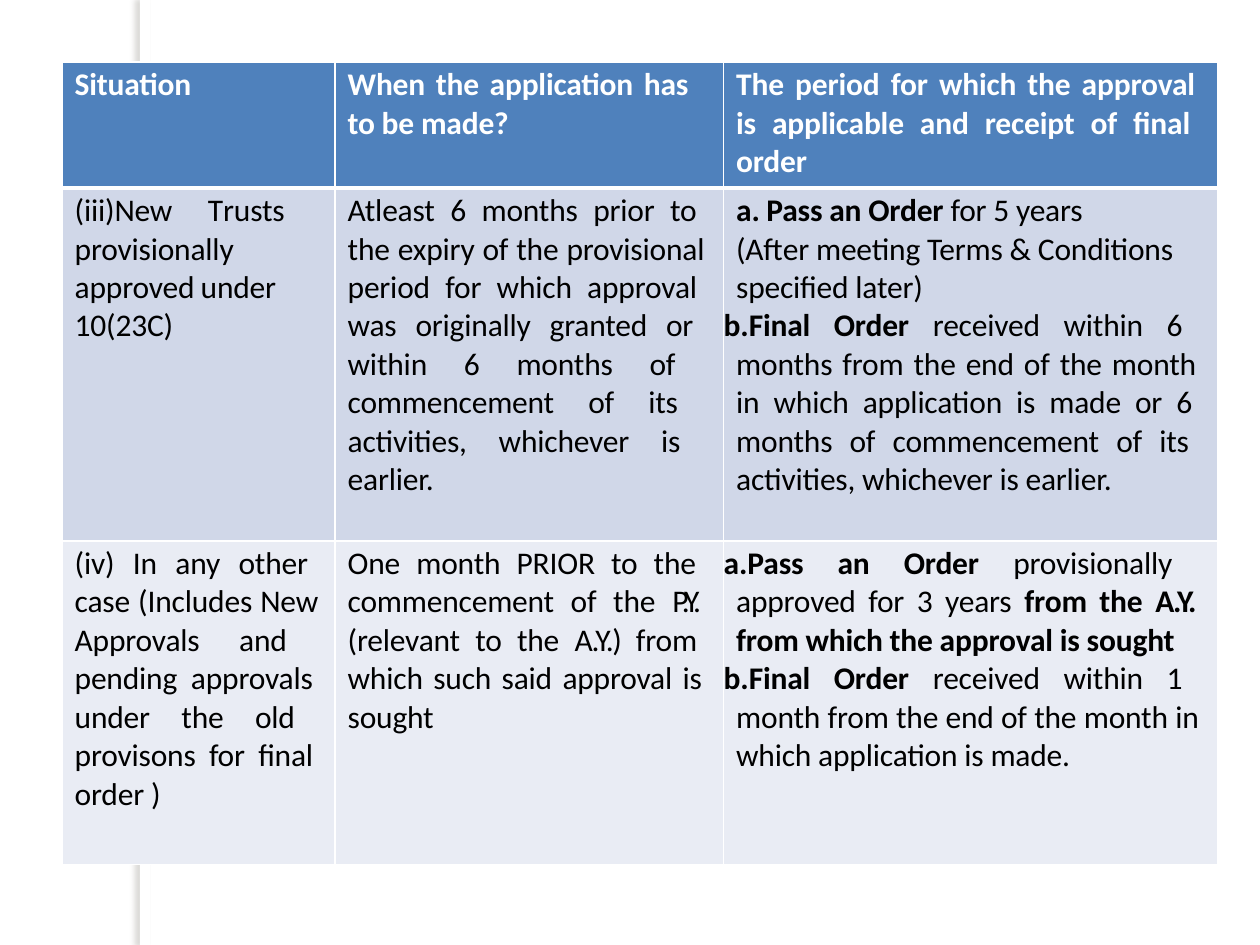
import pptx
import pptx.dml.color
import pptx.enum.shapes
import pptx.enum.text
import pptx.oxml
import pptx.oxml.ns
import pptx.util
from lxml import etree

Pt = pptx.util.Pt
RGBColor = pptx.dml.color.RGBColor
qn = pptx.oxml.ns.qn
Align = pptx.enum.text.PP_ALIGN

WHITE = RGBColor(0xFF, 0xFF, 0xFF)
BLACK = RGBColor(0, 0, 0)
SHADOW = RGBColor(0x73, 0x6F, 0x63)
ROW_FILLS = [RGBColor(0x4F, 0x81, 0xBC), RGBColor(0xD0, 0xD7, 0xE8), RGBColor(0xE9, 0xEC, 0xF4)]

FONT, SIZE, TRACKING = "Calibri", 18, -0.1
TABLE_LEFT, TABLE_TOP = 35.5, 35.5
COLUMN_WIDTHS = [156, 222, 282.3]
ROW_HEIGHTS = [72, 201.6, 185]
RIGHT_MARGINS = [5, 6.5, 6.5]
INDENT = 7.2


def text(*spans, **options):
    """One paragraph; a span is a string or (string, bold, tracking)."""
    return {"spans": spans, **options}


def bold(words, tracking=TRACKING):
    return (words, True, tracking)


ROWS = [
    [
        [text(bold("Situation"), left=True)],
        [text(bold("When the application has  to be made?"), right=14)],
        [text(bold("The period for which the approval  is applicable and receipt of final  order"))],
    ],
    [
        [text("(iii)New\t ", ("T", False, -1.1), "rusts  provisionally  approved\tunder  10(23C)",
              left=True, right=18, tab=105)],
        [text("Atleast 6 months prior to  the expiry of the provisional  period for which approval  "
              "was originally granted or  within 6 months of  commencement of its  activities, "
              "whichever is  earlier.")],
        [
            text(bold("Pass an Order "), "for 5 years", number=1, indent=24.5, hang=17.3),
            text("(After meeting Terms & Conditions", before=0),
            text("specified later)", before=0),
            text(bold("Final Order "), "received within 6  months from the end of the month  in which "
                 "application is made or 6  months of commencement of its  activities, whichever is "
                 "earlier.", number=2, before=0),
        ],
    ],
    [
        [text("(iv) In any other  case (Includes New  Approvals and  pending approvals  under the old  "
              "provisons for final  order )")],
        [text("One month PRIOR to the  commencement of the ", ("P.Y.  ", False, -1.6),
              "(relevant to the ", ("A.Y.) ", False, -0.8),
              "from  which such said approval is  sought")],
        [
            text(bold("Pass an Order "), "provisionally  approved for 3 years ", bold("from the "),
                 bold("A.Y.  ", -0.9), bold("from which the approval is sought"), number=1),
            text(bold("Final Order "), "received within 1  month from the end of the month in  which "
                 "application is made.", number=2, before=0),
        ],
    ],
]


def add_child(parent, tag, **attributes):
    child = etree.SubElement(parent, qn(tag))
    for name, value in attributes.items():
        child.set(name, str(value))
    return child


def add_side_band(page):
    band = page.shapes.add_shape(pptx.enum.shapes.MSO_SHAPE.RECTANGLE, Pt(80), 0, Pt(5.8), Pt(540))
    band.fill.solid()
    band.fill.fore_color.rgb = WHITE
    band.line.fill.background()
    band.shadow.inherit = False
    effects = band.element.spPr.find(qn("a:effectLst"))
    shadow = add_child(effects, "a:outerShdw", blurRad=Pt(3), dist=Pt(3), dir=180 * 60000,
                       algn="ctr", rotWithShape=0)
    color = add_child(shadow, "a:srgbClr", val=SHADOW)
    add_child(color, "a:alpha", val=25000)


def set_borders(cell, top, bottom):
    properties = cell._tc.get_or_add_tcPr()
    for side, width in (("L", 1), ("R", 1), ("T", top), ("B", bottom)):
        line = add_child(properties, "a:ln" + side, w=Pt(width))
        add_child(add_child(line, "a:solidFill"), "a:srgbClr", val=WHITE)


def write_paragraph(para, content, color, right):
    para.alignment = Align.LEFT if content.get("left") else Align.JUSTIFY
    para.space_before = Pt(content.get("before", 2.4))
    properties = para._p.get_or_add_pPr()
    properties.set("marL", str(Pt(content.get("indent", INDENT))))
    properties.set("marR", str(Pt(content.get("right", right))))
    hang = content.get("hang", INDENT) if "number" in content else 0
    properties.set("indent", str(-Pt(hang)))
    if "number" in content:
        add_child(properties, "a:buAutoNum", type="alphaLcPeriod", startAt=content["number"])
    else:
        add_child(properties, "a:buNone")
    if "tab" in content:
        add_child(add_child(properties, "a:tabLst"), "a:tab", pos=Pt(content["tab"]), algn="l")
    for part in content["spans"]:
        words, is_bold, tracking = (part, False, TRACKING) if isinstance(part, str) else part
        span = para.add_run()
        span.text = words
        span.font.name = FONT
        span.font.size = Pt(SIZE)
        span.font.bold = is_bold
        span.font.color.rgb = color
        span._r.get_or_add_rPr().set("spc", str(round(tracking * 100)))


def fill_cell(cell, contents, row, right):
    cell.margin_left = cell.margin_right = cell.margin_bottom = 0
    cell.margin_top = Pt(2)
    set_borders(cell, top=3 if row == 1 else 1, bottom=3 if row == 0 else 1)
    cell.fill.solid()
    cell.fill.fore_color.rgb = ROW_FILLS[row]
    frame = cell.text_frame
    for index, content in enumerate(contents):
        para = frame.add_paragraph() if index else frame.paragraphs[0]
        write_paragraph(para, content, BLACK if row else WHITE, right)


def main():
    deck = pptx.Presentation()
    deck.slide_width, deck.slide_height = Pt(720), Pt(540)
    page = deck.slides.add_slide(deck.slide_layouts[6])
    add_side_band(page)
    table = page.shapes.add_table(len(ROW_HEIGHTS), len(COLUMN_WIDTHS), Pt(TABLE_LEFT), Pt(TABLE_TOP),
                                  Pt(sum(COLUMN_WIDTHS)), Pt(sum(ROW_HEIGHTS))).table
    for column, width in zip(table.columns, COLUMN_WIDTHS):
        column.width = Pt(width)
    for row, (height, cells) in enumerate(zip(ROW_HEIGHTS, ROWS)):
        table.rows[row].height = Pt(height)
        for column, contents in enumerate(cells):
            fill_cell(table.cell(row, column), contents, row, RIGHT_MARGINS[column])
    deck.save("out.pptx")


if __name__ == "__main__":
    main()
